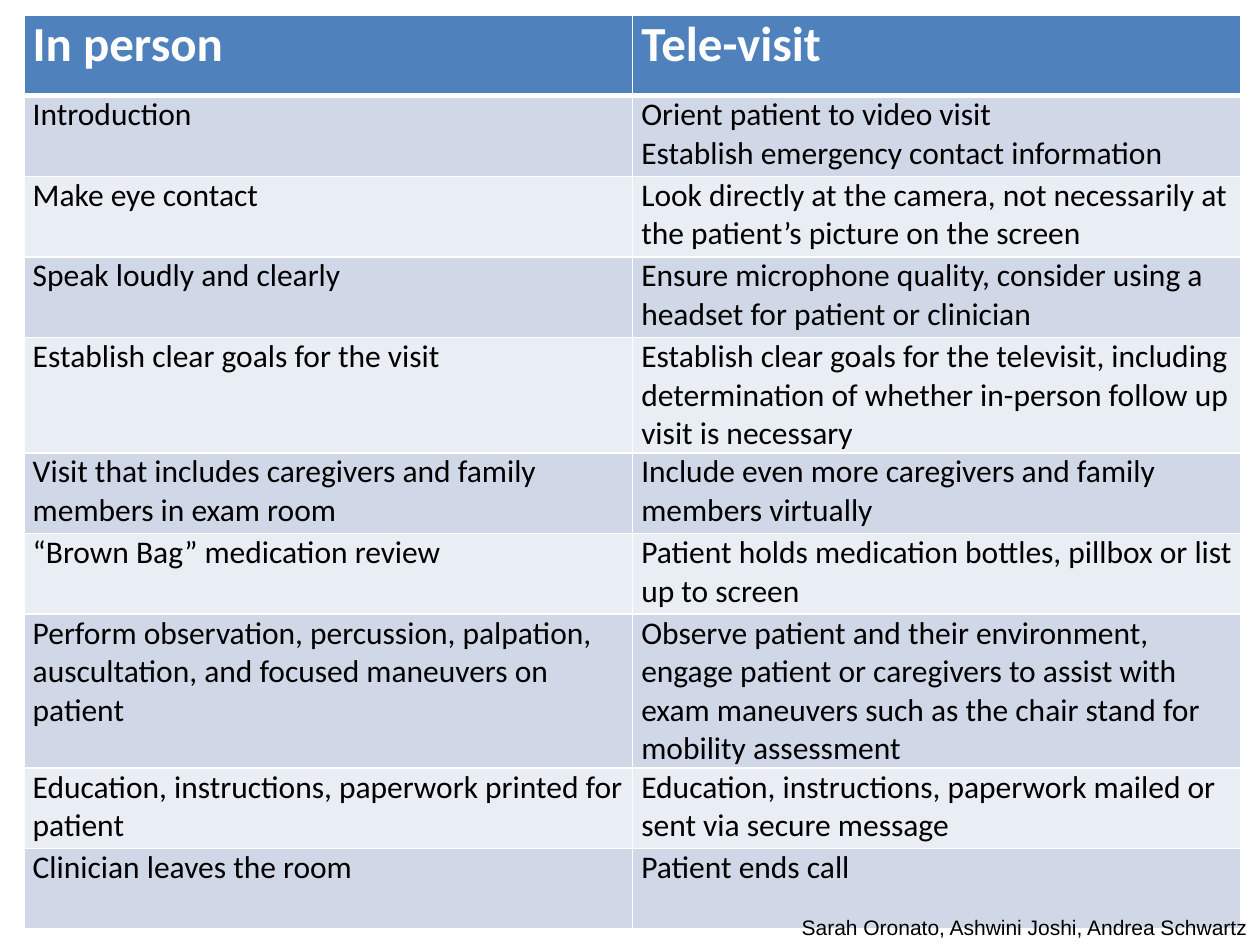
from dataclasses import dataclass

from lxml import etree
from pptx import Presentation
from pptx.dml.color import RGBColor
from pptx.enum.text import MSO_AUTO_SIZE, PP_ALIGN
from pptx.oxml.ns import qn
from pptx.util import Inches, Pt

RIGHT = PP_ALIGN.RIGHT
GROW = MSO_AUTO_SIZE.SHAPE_TO_FIT_TEXT


@dataclass(frozen=True)
class Theme:
    head: str = "4F81BD"
    bands: tuple[str, str] = ("D0D8E8", "E9EDF4")
    white: str = "FFFFFF"
    black: str = "000000"
    font: str = "Calibri"
    note_font: str = "Arial"
    head_size: int = 28
    body_size: int = 18
    note_size: int = 12


@dataclass(frozen=True)
class Step:
    room: str
    tele: str
    height: float = 0.64


THEME = Theme()
WIDTH, HEIGHT = 10, 7.5
LEFT, TOP, COL = 0.19, 0.12, 4.83
SIDE = 0.07
STEPS = [
    Step("In person", "Tele-visit"),
    Step("Introduction",
         "Orient patient to video visit\nEstablish emergency contact information"),
    Step("Make eye contact",
         "Look directly at the camera, not necessarily at the patient’s picture on the screen"),
    Step("Speak loudly and clearly",
         "Ensure microphone quality, consider using a headset for patient or clinician"),
    Step("Establish clear goals for the visit",
         "Establish clear goals for the televisit, including determination of whether "
         "in-person follow up visit is necessary"),
    Step("Visit that includes caregivers and family members in exam room",
         "Include even more caregivers and family members virtually"),
    Step("“Brown Bag” medication review",
         "Patient holds medication bottles, pillbox or list up to screen"),
    Step("Perform observation, percussion, palpation, auscultation, and focused "
         "maneuvers on patient",
         "Observe patient and their environment, engage patient or caregivers to assist "
         "with exam maneuvers such as the chair stand for mobility assessment", 0.95),
    Step("Education, instructions, paperwork printed for patient",
         "Education, instructions, paperwork mailed or sent via secure message"),
    Step("Clinician leaves the room", "Patient ends call"),
]


def style(frame, font: str, size: int, color: str, bold: bool = False) -> None:
    for para in frame.paragraphs:
        for run in para.runs:
            run.font.name = font
            run.font.size = Pt(size)
            run.font.bold = bold
            run.font.color.rgb = RGBColor.from_string(color)


def edge(cell, side: str, width: float) -> None:
    """Draw one white cell border; call before the cell is filled."""
    props = cell._tc.get_or_add_tcPr()
    line = etree.SubElement(props, qn(f"a:ln{side}"), w=str(Pt(width)))
    fill = etree.SubElement(line, qn("a:solidFill"))
    etree.SubElement(fill, qn("a:srgbClr"), val=THEME.white)


def draw_cell(cell, text: str, row: int) -> None:
    head = row == 0
    cell.margin_left = cell.margin_right = Inches(SIDE)
    cell.margin_top = cell.margin_bottom = 0
    for side in "LRTB":
        thick = (head and side == "B") or (row == 1 and side == "T")
        edge(cell, side, 3 if thick else 1)
    cell.fill.solid()
    shade = THEME.head if head else THEME.bands[(row - 1) % 2]
    cell.fill.fore_color.rgb = RGBColor.from_string(shade)
    cell.text_frame.text = text
    style(cell.text_frame, THEME.font,
          THEME.head_size if head else THEME.body_size,
          THEME.white if head else THEME.black, head)


def draw_table(slide, steps: list[Step]) -> None:
    tall = sum(step.height for step in steps)
    table = slide.shapes.add_table(
        len(steps), 2, Inches(LEFT), Inches(TOP), Inches(2 * COL), Inches(tall)).table
    for col in table.columns:
        col.width = Inches(COL)
    for row, step in enumerate(steps):
        table.rows[row].height = Inches(step.height)
        for col, text in enumerate((step.room, step.tele)):
            draw_cell(table.cell(row, col), text, row)


def draw_note(slide, text: str) -> None:
    wide, tall = 3.81, 0.3
    box = slide.shapes.add_textbox(
        Inches(WIDTH - wide), Inches(7.21), Inches(wide), Inches(tall))
    frame = box.text_frame
    frame.word_wrap = False
    frame.auto_size = GROW
    frame.text = text
    frame.paragraphs[0].alignment = RIGHT
    style(frame, THEME.note_font, THEME.note_size, THEME.black)


def main() -> None:
    deck = Presentation()
    deck.slide_width, deck.slide_height = Inches(WIDTH), Inches(HEIGHT)
    slide = deck.slides.add_slide(deck.slide_layouts[6])
    draw_table(slide, STEPS)
    draw_note(slide, "Sarah Oronato, Ashwini Joshi, Andrea Schwartz")
    deck.save("out.pptx")


if __name__ == "__main__":
    main()
